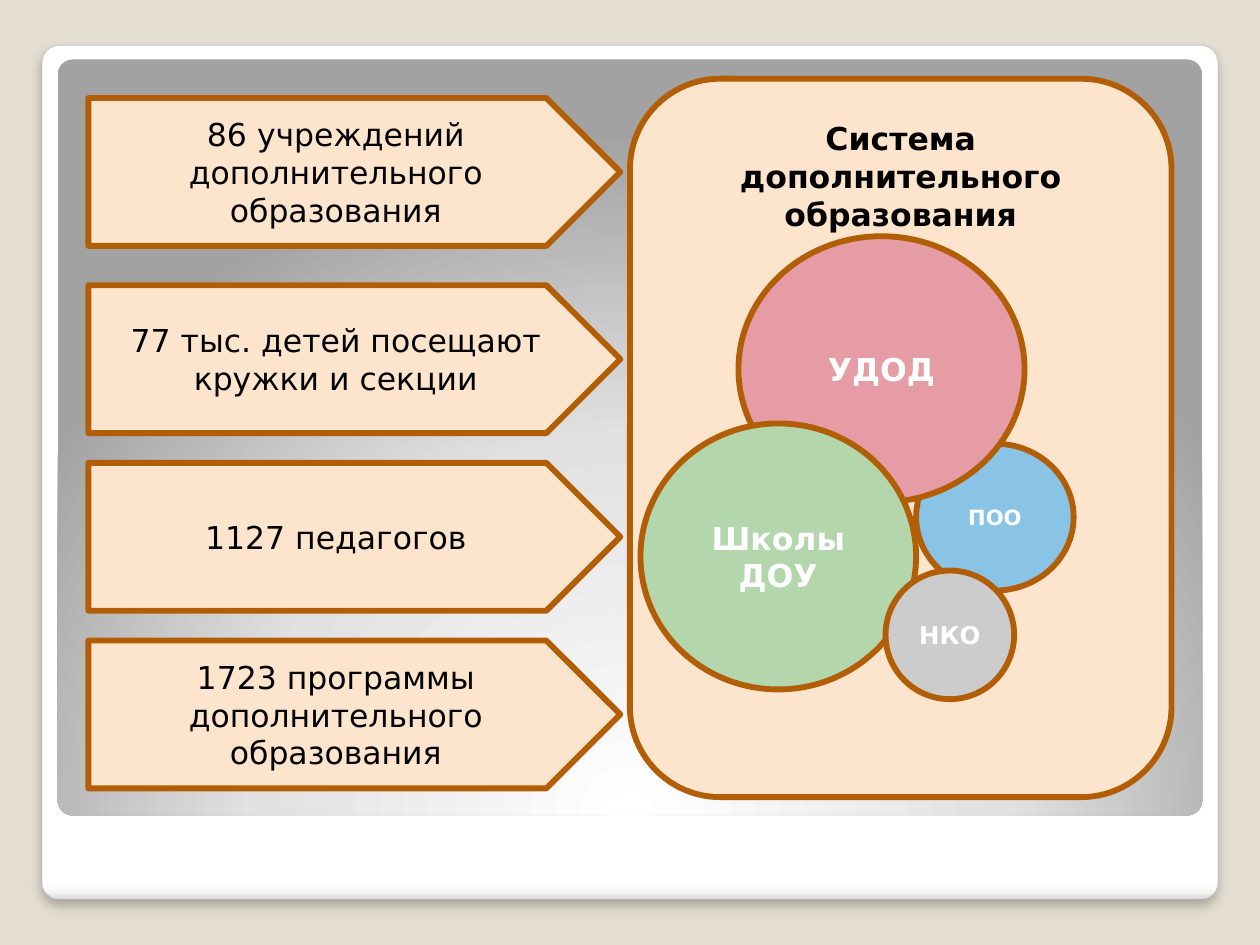
from lxml import etree
from pptx import Presentation
from pptx.dml.color import RGBColor
from pptx.enum.shapes import MSO_SHAPE
from pptx.enum.text import MSO_ANCHOR, PP_ALIGN
from pptx.oxml import parse_xml
from pptx.oxml.ns import nsdecls, qn
from pptx.util import Pt

ROUNDED = MSO_SHAPE.ROUNDED_RECTANGLE
PENTAGON = MSO_SHAPE.PENTAGON
OVAL = MSO_SHAPE.OVAL
MIDDLE, TOP = MSO_ANCHOR.MIDDLE, MSO_ANCHOR.TOP
CENTER = PP_ALIGN.CENTER

FONT = "DejaVu Sans"
BEIGE = RGBColor(0xE3, 0xDE, 0xD1)
CARD_EDGE = RGBColor(0xA4, 0xA4, 0xA4)
PEACH = RGBColor(0xFD, 0xE5, 0xCD)
BROWN = RGBColor(0xB2, 0x5E, 0x07)
BLUE = RGBColor(0x89, 0xC3, 0xE5)
PINK = RGBColor(0xE6, 0x9C, 0xA4)
GREEN = RGBColor(0xB3, 0xD6, 0xAC)
GRAY = RGBColor(0xCC, 0xCC, 0xCC)
BLACK = RGBColor(0, 0, 0)
WHITE = RGBColor(0xFF, 0xFF, 0xFF)

deck = Presentation()
deck.slide_width, deck.slide_height = Pt(720), Pt(540)
page = deck.slides.add_slide(deck.slide_layouts[6])
page.background.fill.solid()
page.background.fill.fore_color.rgb = BEIGE


def add_gradient_card(left, top, width, height, stops, direction):
    card = page.shapes.add_shape(ROUNDED, Pt(left), Pt(top), Pt(width), Pt(height))
    card.adjustments[0] = 0.02
    card.shadow.inherit = False
    card.line.fill.background()
    stop_xml = "".join(
        f'<a:gs pos="{position * 1000}"><a:srgbClr val="{color}"/></a:gs>'
        for position, color in stops
    )
    gradient = parse_xml(
        f'<a:gradFill {nsdecls("a")} rotWithShape="1">'
        f"<a:gsLst>{stop_xml}</a:gsLst>{direction}</a:gradFill>"
    )
    card.element.spPr.find(qn("a:prstGeom")).addnext(gradient)
    return card


def add_labelled_shape(kind, left, top, width, height, fill, text, size, color, bold):
    shape = page.shapes.add_shape(kind, Pt(left), Pt(top), Pt(width), Pt(height))
    shape.shadow.inherit = False
    shape.fill.solid()
    shape.fill.fore_color.rgb = fill
    shape.line.color.rgb = BROWN
    shape.line.width = Pt(3.35)
    frame = shape.text_frame
    frame.word_wrap = True
    frame.vertical_anchor = MIDDLE
    frame.text = text
    para = frame.paragraphs[0]
    para.alignment = CENTER
    font = para.runs[0].font
    font.name, font.size, font.bold = FONT, Pt(size), bold
    font.color.rgb = color
    return shape


# White card with a soft shadow, and the gray field on it
white_card = add_gradient_card(
    24, 26, 672, 488,
    [(0, "FFFFFF"), (98, "FFFFFF"), (99, "F7F7F7"), (100, "DADADA")],
    '<a:lin ang="5400000" scaled="0"/>',
)
white_card.line.color.rgb = CARD_EDGE
white_card.line.width = Pt(0.16)
effects = white_card.element.spPr.find(qn("a:effectLst"))
shadow = etree.SubElement(
    effects, qn("a:outerShdw"),
    blurRad=str(Pt(6)), dist=str(Pt(4)), dir="5400000", algn="t", rotWithShape="0",
)
shadow_color = etree.SubElement(shadow, qn("a:srgbClr"), val="000000")
etree.SubElement(shadow_color, qn("a:alpha"), val="25000")

add_gradient_card(
    33, 34, 654, 432,
    [(0, "FFFFFF"), (55, "E1E1E1"), (100, "A2A2A2")],
    '<a:path path="circle"><a:fillToRect l="50000" t="175000" r="50000" b="-75000"/></a:path>',
)

# Key figures
figures = [
    (56, "86 учреждений дополнительного образования"),
    (163, "77 тыс. детей посещают кружки и секции"),
    (264.5, "1127 педагогов"),
    (366, "1723 программы дополнительного образования"),
]
for top, text in figures:
    add_labelled_shape(PENTAGON, 50.5, top, 304, 84.5, PEACH, text, 18, BLACK, False)

# Panel of the system
panel = add_labelled_shape(
    ROUNDED, 360, 45, 309.5, 410.5, PEACH,
    "Система дополнительного образования", 18, BLACK, True,
)
panel.text_frame.vertical_anchor = TOP
panel.text_frame.margin_top = Pt(8)

# Kinds of institutions, back to front
circles = [
    (523.5, 253.5, 90, 84, BLUE, "ПОО", 12),
    (422, 135, 163.5, 152, PINK, "УДОД", 18),
    (366, 242, 157.5, 152, GREEN, "Школы ДОУ", 18),
    (506, 326, 73.5, 73.5, GRAY, "НКО", 14),
]
for left, top, width, height, fill, text, size in circles:
    add_labelled_shape(OVAL, left, top, width, height, fill, text, size, WHITE, True)

deck.save("out.pptx")
